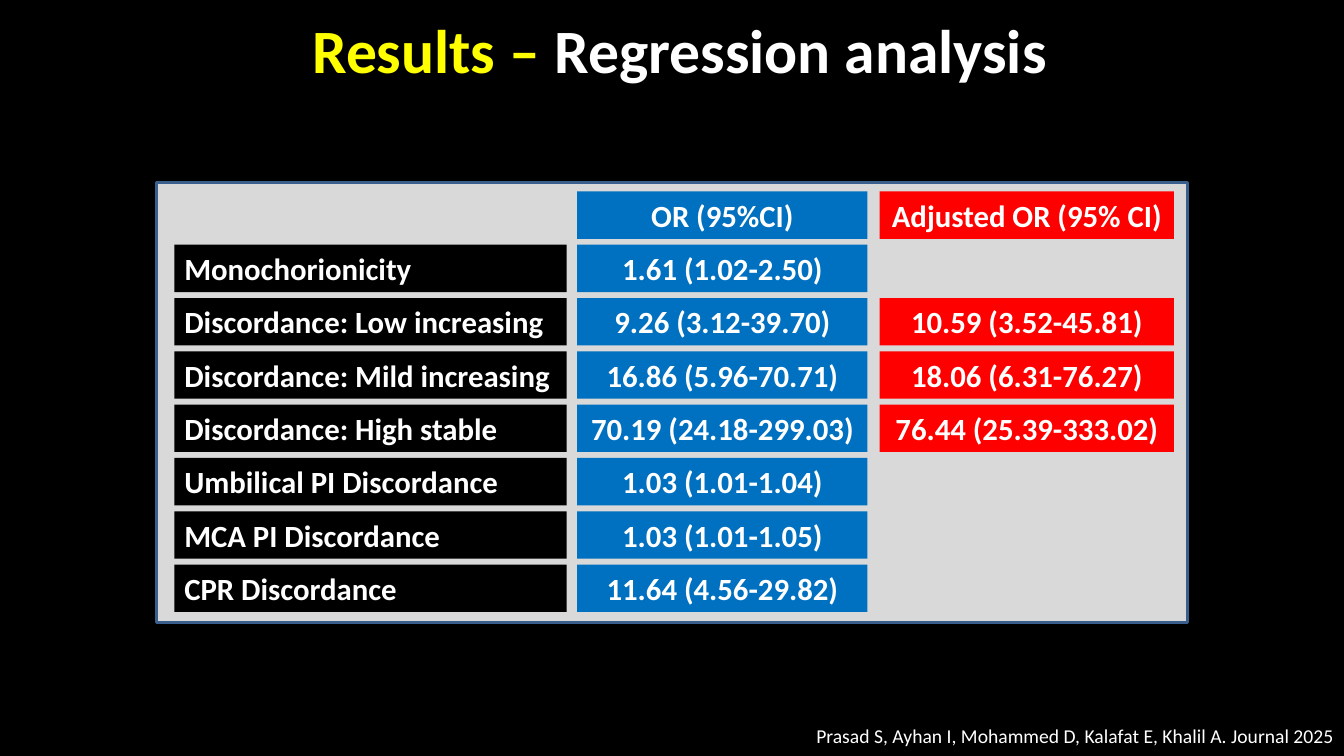
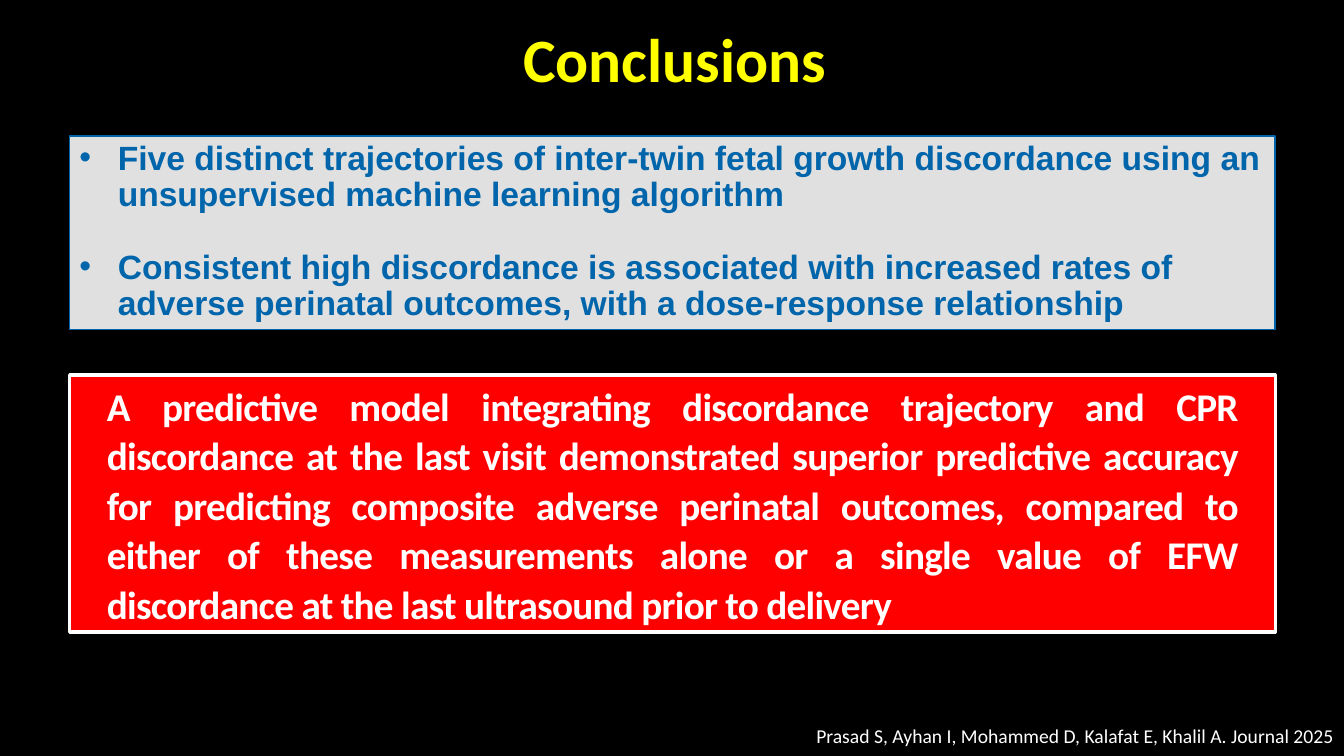
from dataclasses import dataclass

from lxml import etree
from pptx import Presentation
from pptx.dml.color import RGBColor
from pptx.enum.shapes import MSO_SHAPE
from pptx.enum.text import MSO_ANCHOR, PP_ALIGN
from pptx.oxml.ns import qn
from pptx.util import Inches, Pt

RECTANGLE = MSO_SHAPE.RECTANGLE
TOP = MSO_ANCHOR.TOP
LEFT, CENTER, RIGHT, JUSTIFY = PP_ALIGN.LEFT, PP_ALIGN.CENTER, PP_ALIGN.RIGHT, PP_ALIGN.JUSTIFY

SLIDE_WIDTH, SLIDE_HEIGHT = Inches(13.333), Inches(7.5)
BLANK_LAYOUT = 6
COLORS = {
    "black": "000000",
    "white": "FFFFFF",
    "yellow": "FFFF00",
    "red": "FF0000",
    "blue": "0070C0",
    "panel": "D9D9D9",
    "panel_line": "3A5F8C",
    "findings": "E0E0E0",
    "findings_ink": "0065AA",
}
CITATION = "Prasad S, Ayhan I, Mohammed D, Kalafat E, Khalil A. Journal 2025"


@dataclass(frozen=True)
class Box:
    """A rectangle in percent of the slide's width and height."""
    left: float
    top: float
    width: float
    height: float

    def lengths(self) -> tuple[int, int, int, int]:
        return (int(SLIDE_WIDTH * self.left / 100), int(SLIDE_HEIGHT * self.top / 100),
                int(SLIDE_WIDTH * self.width / 100), int(SLIDE_HEIGHT * self.height / 100))


@dataclass(frozen=True)
class Span:
    text: str
    color: str = "white"


@dataclass(frozen=True)
class TextStyle:
    size: float
    align: PP_ALIGN = CENTER
    bold: bool = True
    font: str = "Calibri"
    line_spacing: float = 1.0


@dataclass(frozen=True)
class Column:
    left: float
    width: float
    fill: str
    align: PP_ALIGN


TITLE_STYLE = TextStyle(44, line_spacing=0.85)
CITATION_STYLE = TextStyle(14, RIGHT, bold=False, line_spacing=0.85)
FINDING_STYLE = TextStyle(24, LEFT, font="Arial", line_spacing=0.9)
MESSAGE_STYLE = TextStyle(28, JUSTIFY, line_spacing=1.05)

CITATION_BOX = Box(44.56, 95.6, 55.44, 4)
PANEL_BOX = Box(11.63, 24.13, 76.73, 58.27)
FINDINGS_BOX = Box(5.18, 18, 89.7, 25.6)
MESSAGE_BOX = Box(5.18, 49.6, 89.7, 34)

COLUMNS = (
    Column(12.98, 29.18, "black", LEFT),
    Column(42.95, 21.6, "blue", CENTER),
    Column(65.45, 21.9, "red", CENTER),
)
FIRST_ROW, ROW_PITCH, ROW_HEIGHT = 25.33, 7.05, 6.27
ROWS = (
    ("", "OR (95%CI)", "Adjusted OR (95% CI)"),
    ("Monochorionicity", "1.61 (1.02-2.50)", ""),
    ("Discordance: Low increasing", "9.26 (3.12-39.70)", "10.59 (3.52-45.81)"),
    ("Discordance: Mild increasing", "16.86 (5.96-70.71)", "18.06 (6.31-76.27)"),
    ("Discordance: High stable", "70.19 (24.18-299.03)", "76.44 (25.39-333.02)"),
    ("Umbilical PI Discordance", "1.03 (1.01-1.04)", ""),
    ("MCA PI Discordance", "1.03 (1.01-1.05)", ""),
    ("CPR Discordance", "11.64 (4.56-29.82)", ""),
)

FINDINGS = (
    "Five distinct trajectories of inter-twin fetal growth discordance using an "
    "unsupervised machine learning algorithm",
    "Consistent high discordance is associated with increased rates of adverse "
    "perinatal outcomes, with a dose-response relationship",
)
MESSAGE = (
    "A predictive model integrating discordance trajectory and CPR discordance at the "
    "last visit demonstrated superior predictive accuracy for predicting composite "
    "adverse perinatal outcomes, compared to either of these measurements alone or a "
    "single value of EFW discordance at the last ultrasound prior to delivery"
)


def rgb(name: str) -> RGBColor:
    return RGBColor.from_string(COLORS[name])


def write_paragraph(para, spans: tuple[Span, ...], style: TextStyle) -> None:
    para.alignment = style.align
    para.line_spacing = style.line_spacing
    for span in spans:
        run = para.add_run()
        run.text = span.text
        run.font.name = style.font
        run.font.size = Pt(style.size)
        run.font.bold = style.bold
        run.font.color.rgb = rgb(span.color)


def add_bullet(para, indent: float) -> None:
    """Give the paragraph a hanging bullet, indented in inches."""
    properties = para._p.get_or_add_pPr()
    properties.set("marL", str(Inches(indent)))
    properties.set("indent", str(-Inches(indent)))
    etree.SubElement(properties, qn("a:buFont")).set("typeface", "Arial")
    etree.SubElement(properties, qn("a:buChar")).set("char", "•")


def add_text(page, box: Box, spans: tuple[Span, ...], style: TextStyle) -> None:
    frame = page.shapes.add_textbox(*box.lengths()).text_frame
    frame.word_wrap = True
    write_paragraph(frame.paragraphs[0], spans, style)


def add_rectangle(page, box: Box, fill: str, line: str = "", line_width: float = 0):
    shape = page.shapes.add_shape(RECTANGLE, *box.lengths())
    shape.shadow.inherit = False
    shape.fill.solid()
    shape.fill.fore_color.rgb = rgb(fill)
    if line:
        shape.line.color.rgb = rgb(line)
        shape.line.width = Pt(line_width)
    else:
        shape.line.fill.background()
    shape.text_frame.word_wrap = True
    shape.text_frame.vertical_anchor = TOP
    return shape


def add_page(deck, title_box: Box, title: tuple[Span, ...]):
    """Add a black slide with its title and the citation at the foot."""
    page = deck.slides.add_slide(deck.slide_layouts[BLANK_LAYOUT])
    page.background.fill.solid()
    page.background.fill.fore_color.rgb = rgb("black")
    add_text(page, title_box, title, TITLE_STYLE)
    add_text(page, CITATION_BOX, (Span(CITATION),), CITATION_STYLE)
    return page


def build_regression(deck) -> None:
    title = (Span("Results – ", "yellow"), Span("Regression analysis"))
    page = add_page(deck, Box(11.63, 2.4, 77.92, 9.73), title)
    add_rectangle(page, PANEL_BOX, "panel", "panel_line", 2)
    for index, row in enumerate(ROWS):
        top = FIRST_ROW + index * ROW_PITCH
        for column, text in zip(COLUMNS, row):
            if text:
                box = Box(column.left, top, column.width, ROW_HEIGHT)
                cell = add_rectangle(page, box, column.fill)
                write_paragraph(cell.text_frame.paragraphs[0], (Span(text),),
                                TextStyle(22, column.align))


def build_conclusions(deck) -> None:
    page = add_page(deck, Box(11.25, 3.6, 77.92, 9.73), (Span("Conclusions", "yellow"),))

    findings = add_rectangle(page, FINDINGS_BOX, "findings", "findings_ink", 1).text_frame
    for index, text in enumerate(FINDINGS):
        para = findings.add_paragraph() if index else findings.paragraphs[0]
        write_paragraph(para, (Span(text, "findings_ink"),), FINDING_STYLE)
        para.space_before = Pt(26 if index else 0)
        add_bullet(para, 0.38)

    message = add_rectangle(page, MESSAGE_BOX, "red", "white", 2.25).text_frame
    message.margin_left = message.margin_right = Inches(0.37)
    para = message.paragraphs[0]
    write_paragraph(para, (Span(MESSAGE),), MESSAGE_STYLE)
    para.space_before = Pt(9.1)
    para.runs[0]._r.get_or_add_rPr().set("spc", "-50")


def main() -> None:
    deck = Presentation()
    deck.slide_width, deck.slide_height = SLIDE_WIDTH, SLIDE_HEIGHT
    build_regression(deck)
    build_conclusions(deck)
    deck.save("out.pptx")


if __name__ == "__main__":
    main()
